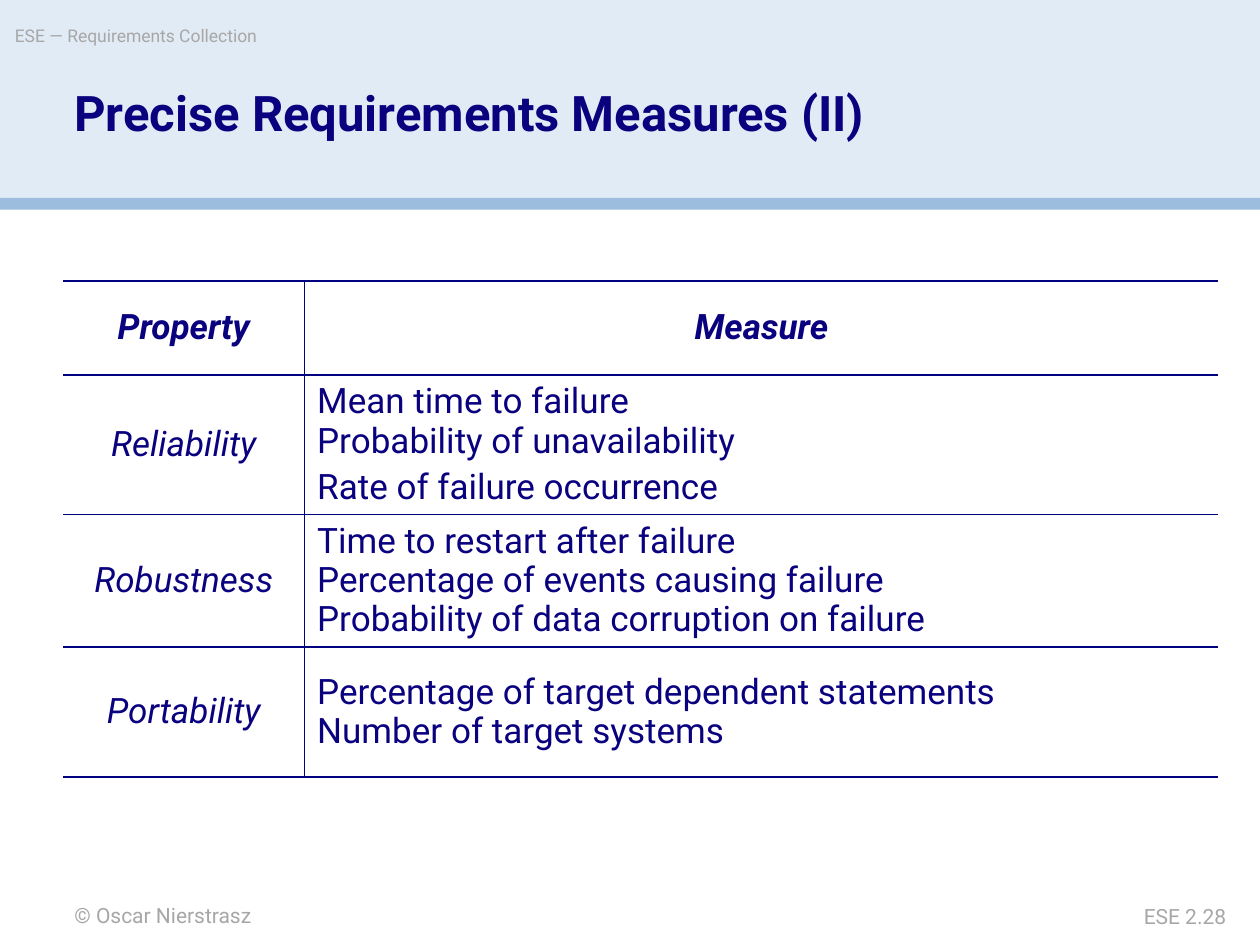
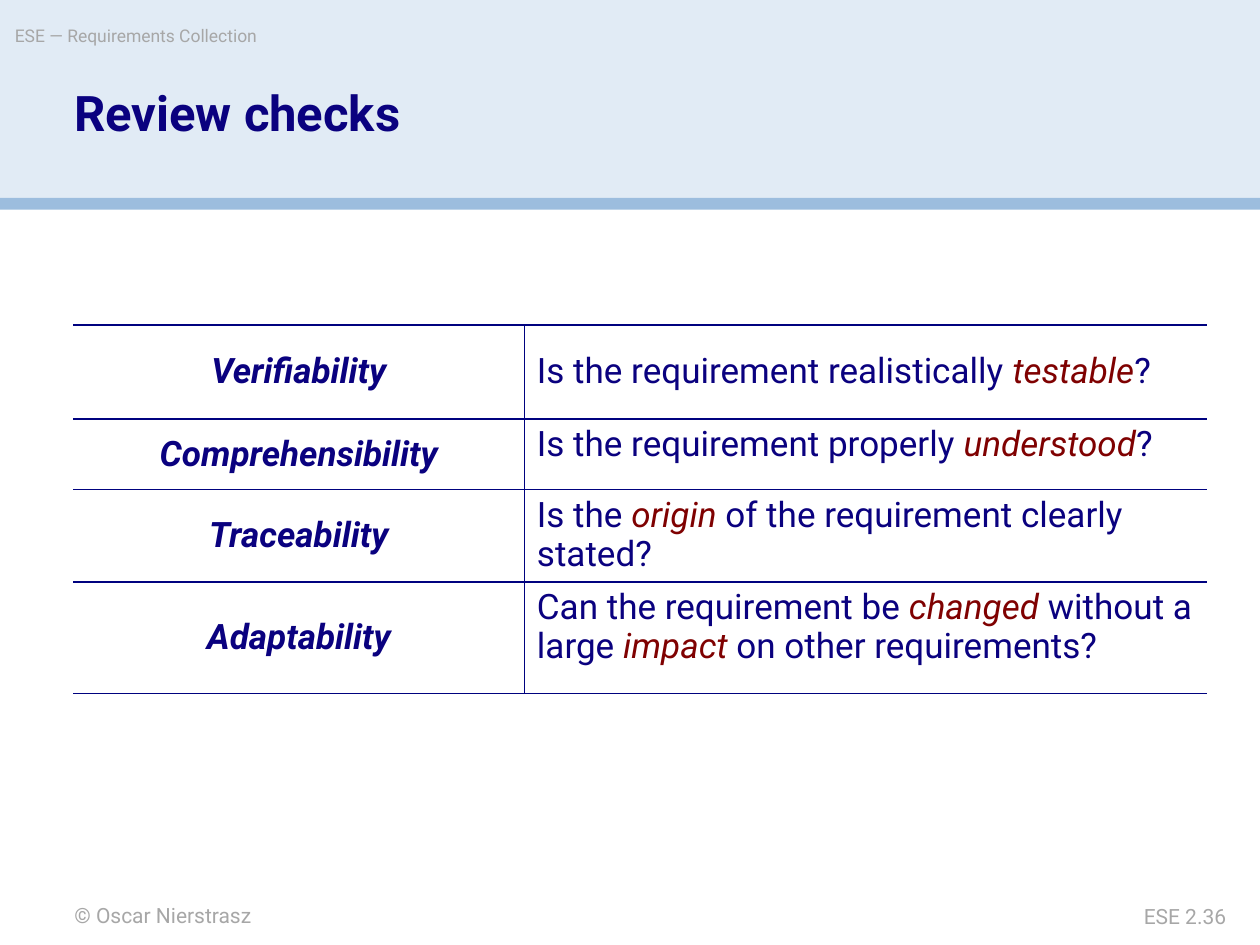
from lxml.etree import SubElement
from pptx import Presentation
from pptx.dml.color import RGBColor
from pptx.enum.shapes import MSO_SHAPE
from pptx.enum.text import MSO_ANCHOR, PP_ALIGN
from pptx.oxml.ns import qn
from pptx.util import Cm, Pt

COLORS = {
    "band": "E1EBF5",
    "stripe": "9CBDDE",
    "text": "0A017F",
    "emphasis": "7F0101",
    "rule": "00027F",
    "footer": "A7A7A7",
}
FONT = "Roboto"
MIDDLE, TOP = MSO_ANCHOR.MIDDLE, MSO_ANCHOR.TOP


def rgb(name):
    """Return the palette colour called name."""
    return RGBColor.from_string(COLORS[name])


def add_run(p, text, size, color="text", bold=False, italic=False):
    """Append one formatted run to a paragraph."""
    r = p.add_run()
    r.text = text
    f = r.font
    f.name, f.size, f.bold, f.italic = FONT, Pt(size), bold, italic
    f.color.rgb = rgb(color)


def add_band(s, top, height, color):
    """Draw a full-width band."""
    sp = s.shapes.add_shape(MSO_SHAPE.RECTANGLE, 0, Cm(top), Cm(25.4), Cm(height))
    sp.shadow.inherit = False
    sp.fill.solid()
    sp.fill.fore_color.rgb = rgb(color)
    sp.line.fill.background()


def add_label(s, text, box, size, color="footer", bold=False,
              align=PP_ALIGN.LEFT, spacing=1.0, wrap=True):
    """Add a one-line text box without insets."""
    tf = s.shapes.add_textbox(*map(Cm, box)).text_frame
    tf.margin_left = tf.margin_right = tf.margin_top = tf.margin_bottom = 0
    tf.word_wrap = wrap
    p = tf.paragraphs[0]
    p.alignment, p.line_spacing = align, spacing
    add_run(p, text, size, color, bold)


def add_base_slide(prs, title, number):
    """Add a slide with the shared bands, title and footers."""
    s = prs.slides.add_slide(prs.slide_layouts[6])
    add_band(s, 0, 4.01, "band")
    add_band(s, 3.99, 0.24, "stripe")
    add_label(s, "© Oscar Nierstrasz", (1.5, 18.19, 10.59, 0.51), 12)
    add_label(s, "ESE — Requirements Collection", (0.3, 0.51, 14.99, 0.71), 10, wrap=False)
    add_label(s, f"ESE {number}", (20.96, 18.21, 3.76, 0.51), 12, align=PP_ALIGN.RIGHT)
    add_label(s, title, (1.5, 1.8, 18.39, 2.26), 28, "text", True, spacing=0.9)
    return s


def set_borders(cell, ruled_sides):
    """Rule the given sides of a cell and clear the others."""
    tcPr = cell._tc.get_or_add_tcPr()
    for side in "LRTB":
        ln = SubElement(tcPr, qn(f"a:ln{side}"), w=str(Pt(1)))
        if side in ruled_sides:
            fill = SubElement(ln, qn("a:solidFill"))
            SubElement(fill, qn("a:srgbClr"), val=COLORS["rule"])
        else:
            SubElement(ln, qn("a:noFill"))


def fill_cell(cell, paragraphs, align=PP_ALIGN.LEFT, anchor=MIDDLE, bold=False, italic=False):
    """Write paragraphs into a cell, emphasising _marked_ words."""
    cell.fill.background()
    cell.vertical_anchor = anchor
    tf = cell.text_frame
    for i, lines in enumerate(paragraphs):
        p = tf.add_paragraph() if i else tf.paragraphs[0]
        p.alignment, p.line_spacing = align, 0.95
        p.space_before = Pt(4 if i else 0)
        for j, line in enumerate(lines.split("\n")):
            if j:
                p.add_line_break()
            for k, part in enumerate(line.split("_")):
                marked = k % 2 == 1
                add_run(p, part, 20, "emphasis" if marked else "text", bold, italic or marked)


def add_property_table(s, left, top, widths, heights, rows, header=None, bold_names=False, anchors=None):
    """Add a ruled table of property names and their descriptions."""
    all_rows = ([header] if header else []) + rows
    table = s.shapes.add_table(len(all_rows), 2, Cm(left), Cm(top),
                               Cm(sum(widths)), Cm(sum(heights))).table
    table.first_row = table.horz_banding = False
    for column, width in zip(table.columns, widths):
        column.width = Cm(width)
    for i, (name, *paragraphs) in enumerate(all_rows):
        table.rows[i].height = Cm(heights[i])
        name_cell, text_cell = table.cell(i, 0), table.cell(i, 1)
        set_borders(name_cell, "RTB")
        set_borders(text_cell, "LTB")
        is_header = bool(header) and i == 0
        fill_cell(name_cell, [name], PP_ALIGN.CENTER, bold=bold_names or is_header, italic=True)
        fill_cell(text_cell, paragraphs, PP_ALIGN.CENTER if is_header else PP_ALIGN.LEFT,
                  anchors[i] if anchors else MIDDLE, is_header, is_header)


def main():
    """Build the two slides."""
    prs = Presentation()
    prs.slide_width, prs.slide_height = Cm(25.4), Cm(19.05)

    s = add_base_slide(prs, "Precise Requirements Measures (II)", "2.28")
    measures = [
        ("Reliability", "Mean time to failure\nProbability of unavailability",
         "Rate of failure occurrence"),
        ("Robustness", "Time to restart after failure\nPercentage of events causing failure\n"
                       "Probability of data corruption on failure"),
        ("Portability", "Percentage of target dependent statements\nNumber of target systems"),
    ]
    add_property_table(s, 1.27, 5.66, (4.87, 18.42), (1.9, 2.76, 2.62, 2.62),
                       measures, header=("Property", "Measure"))

    s = add_base_slide(prs, "Review checks", "2.36")
    checks = [
        ("Verifiability", "Is the requirement realistically _testable_?"),
        ("Comprehensibility", "Is the requirement properly _understood_?"),
        ("Traceability", "Is the _origin_ of the requirement clearly stated?"),
        ("Adaptability", "Can the requirement be _changed_ without a large _impact_"
                         " on other requirements?"),
    ]
    add_property_table(s, 1.48, 6.55, (9.09, 13.77), (1.9, 1.42, 1.84, 2.24),
                       checks, bold_names=True, anchors=(MIDDLE, TOP, TOP, TOP))

    prs.save("out.pptx")


if __name__ == "__main__":
    main()
